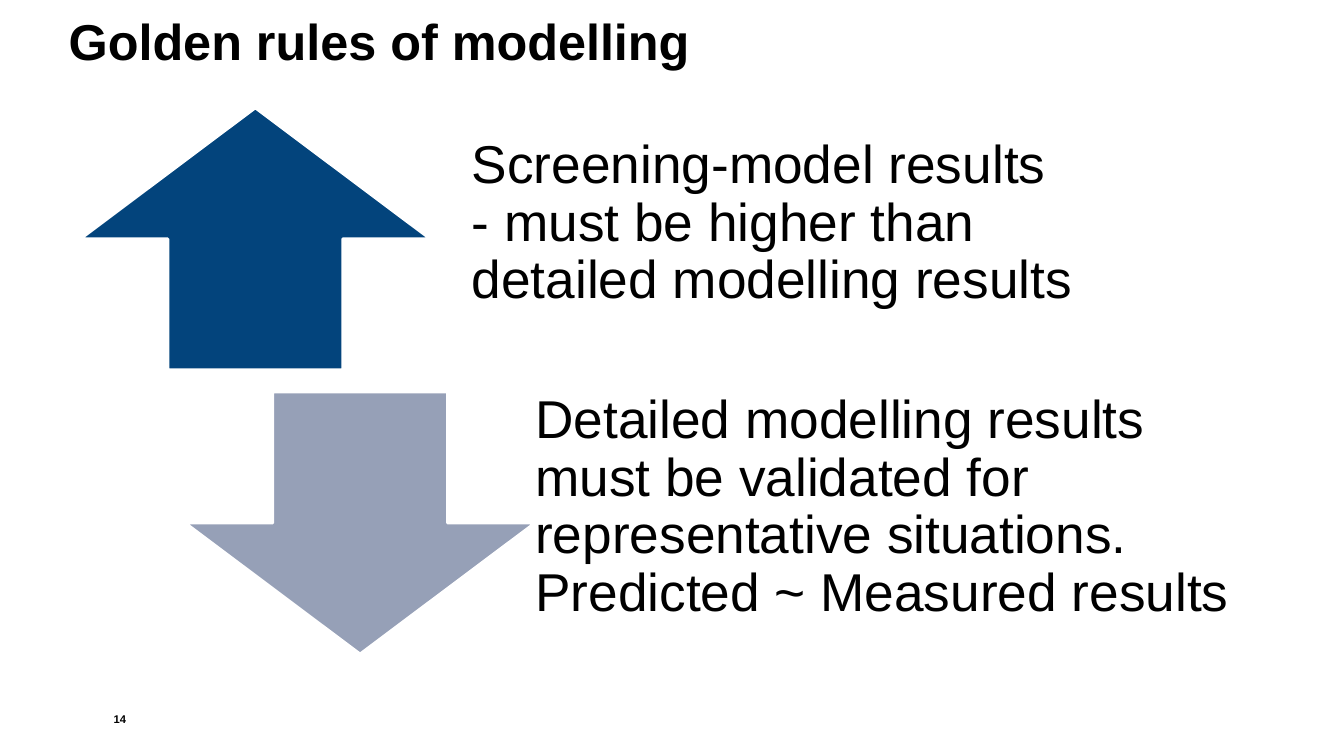
from pptx import Presentation
from pptx.dml.color import RGBColor
from pptx.enum.shapes import MSO_SHAPE
from pptx.enum.text import MSO_ANCHOR, MSO_AUTO_SIZE, PP_ALIGN
from pptx.util import Cm, Pt

UP, DOWN = MSO_SHAPE.UP_ARROW, MSO_SHAPE.DOWN_ARROW
TOP, MIDDLE, BOTTOM = MSO_ANCHOR.TOP, MSO_ANCHOR.MIDDLE, MSO_ANCHOR.BOTTOM
LEFT, RIGHT = PP_ALIGN.LEFT, PP_ALIGN.RIGHT
FIXED = MSO_AUTO_SIZE.NONE
TITLE_ONLY = 5


def color(code):
    return RGBColor.from_string(code)


class Deck:
    """Hold the style and the current slide."""

    font, ink, edge = "Arial", "000000", "FFFFFF"

    def __init__(self):
        self.show = Presentation()
        self.show.slide_width, self.show.slide_height = Cm(33.87), Cm(19.05)
        layout = self.show.slide_layouts[TITLE_ONLY]
        self.slide = self.show.slides.add_slide(layout)

    def letter(self, shape, lines, size, bold=False, anchor=TOP, align=LEFT,
               pad=0, space=0.9):
        frame = shape.text_frame
        frame.word_wrap, frame.auto_size = True, FIXED
        frame.vertical_anchor = anchor
        frame.margin_left = frame.margin_right = frame.margin_bottom = Cm(pad)
        frame.margin_top = 0
        para = frame.paragraphs[0]
        para.alignment, para.line_spacing = align, space
        for i, line in enumerate(lines):
            if i:
                para.add_line_break()
            run = para.add_run()
            run.text = line
            run.font.name, run.font.size = self.font, Pt(size)
            run.font.bold = bold
            run.font.color.rgb = color(self.ink)

    def title(self, text, left, top, width, height):
        shape = self.slide.shapes.title
        shape.left, shape.top = Cm(left), Cm(top)
        shape.width, shape.height = Cm(width), Cm(height)
        self.letter(shape, [text], 36, bold=True)

    def text(self, lines, left, top, width, height, size, **style):
        box = self.slide.shapes.add_textbox(
            Cm(left), Cm(top), Cm(width), Cm(height))
        self.letter(box, lines, size, **style)

    def arrow(self, kind, left, top, width, height, fill):
        shape = self.slide.shapes.add_shape(
            kind, Cm(left), Cm(top), Cm(width), Cm(height))
        shape.shadow.inherit = False
        shape.fill.solid()
        shape.fill.fore_color.rgb = color(fill)
        shape.line.color.rgb = color(self.edge)
        shape.line.width = Pt(2)


def main():
    deck = Deck()
    deck.title("Golden rules of modelling", 1.73, 0.43, 30.4, 1.68)
    high = 6.6
    rules = [
        (UP, "03447C", 2.03, 2.72, 11.13, 17.02,
         ["Screening-model results",
          "- must be higher than detailed modelling results"]),
        (DOWN, "96A0B7", 4.67, 9.88, 12.73, 19.1,
         ["Detailed modelling results must be validated for "
          "representative situations. Predicted ~ Measured results"]),
    ]
    for kind, fill, left, top, start, wide, lines in rules:
        deck.arrow(kind, left, top, 8.81, high, fill)
        deck.text(lines, start, top, wide, high, 38, anchor=MIDDLE, pad=0.76)
    deck.text(["14"], 1.73, 17.22, 1.45, 1.07, 8, bold=True,
              anchor=BOTTOM, align=RIGHT, space=0.95)
    deck.show.save("out.pptx")


if __name__ == "__main__":
    main()
